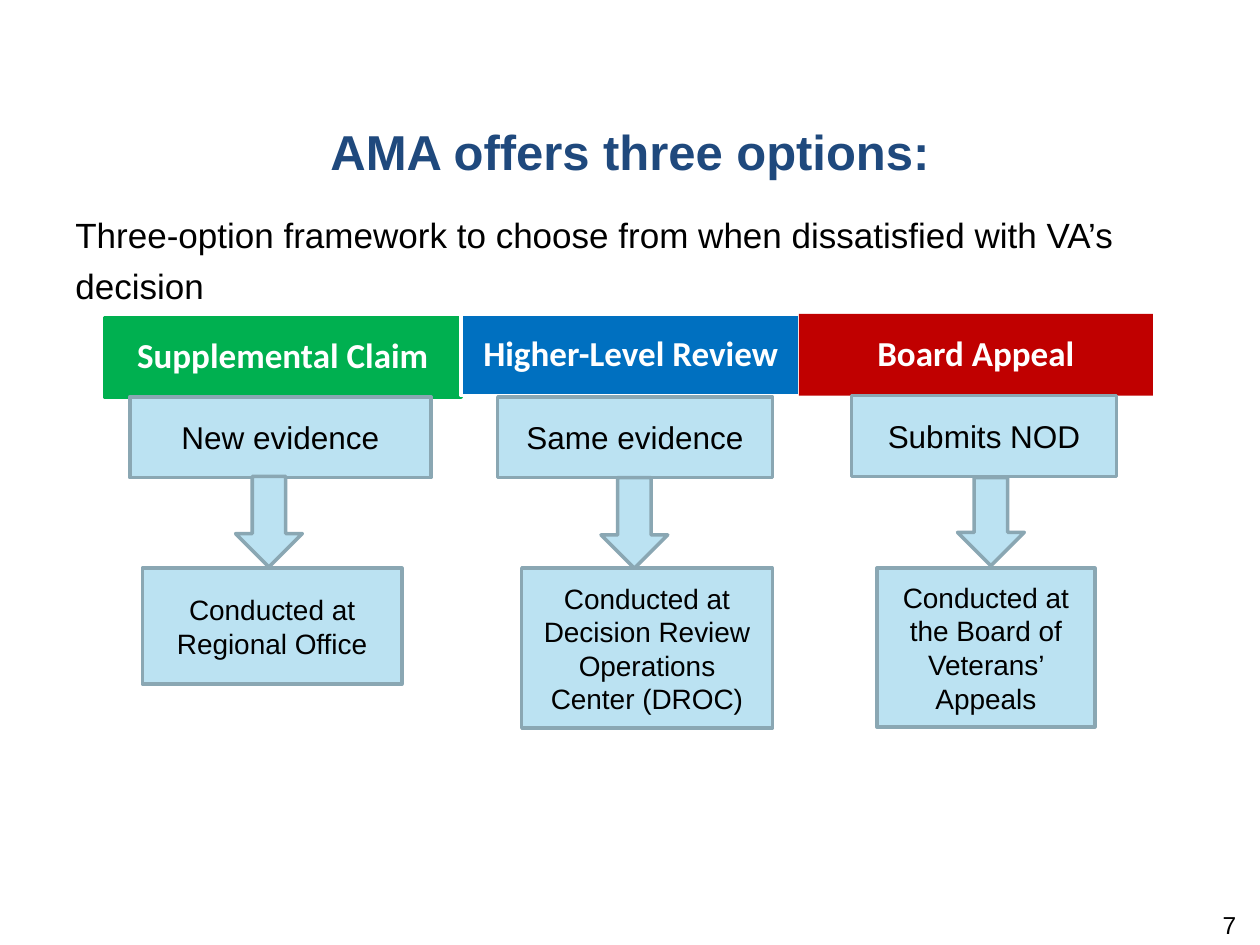
"""Build the slide on the three AMA review options."""
from pptx import Presentation
from pptx.dml.color import RGBColor
from pptx.enum.shapes import MSO_SHAPE
from pptx.enum.text import MSO_ANCHOR, PP_ALIGN
from pptx.util import Inches, Pt

RECT, PROCESS, ARROW = MSO_SHAPE.RECTANGLE, MSO_SHAPE.FLOWCHART_PROCESS, MSO_SHAPE.DOWN_ARROW
LEFT, CENTER, RIGHT = PP_ALIGN.LEFT, PP_ALIGN.CENTER, PP_ALIGN.RIGHT
TOP, MIDDLE = MSO_ANCHOR.TOP, MSO_ANCHOR.MIDDLE

THEME = {
    "title": ("Arial", 28, "1F497D", True),
    "body": ("Arial", 20, "000000", False),
    "number": ("Arial", 14, "000000", False),
    "header": ("Calibri", 20, "FFFFFF", True),
    "step": ("Arial", 18, "000000", False),
    "place": ("Arial", 16, "000000", False),
    "box_fill": "BBE2F2",
    "box_line": "8AA7B3",
    "green": "00B050",
    "blue": "0070C0",
    "red": "C00000",
    "white": "FFFFFF",
}

prs = Presentation()
prs.slide_width, prs.slide_height = Inches(10), Inches(7.5)
s = prs.slides.add_slide(prs.slide_layouts[6])
COL, ROW = prs.slide_width / 100, prs.slide_height / 75


def write(sp, text, style, align=CENTER, anchor=MIDDLE, spacing=1.0, top=0.05):
    name, size, color, bold = THEME[style]
    tf = sp.text_frame
    tf.word_wrap = True
    tf.vertical_anchor = anchor
    tf.margin_top = Inches(top)
    tf.text = text
    p = tf.paragraphs[0]
    p.alignment = align
    p.line_spacing = spacing
    r = p.runs[0]
    r.font.name, r.font.size, r.font.bold = name, Pt(size), bold
    r.font.color.rgb = RGBColor.from_string(color)


def add_box(kind, x, y, w, h, fill="box_fill", line="box_line"):
    sp = s.shapes.add_shape(kind, int(x * COL), int(y * ROW), int(w * COL), int(h * ROW))
    sp.shadow.inherit = False
    sp.fill.solid()
    sp.fill.fore_color.rgb = RGBColor.from_string(THEME[fill])
    if line:
        sp.line.color.rgb = RGBColor.from_string(THEME[line])
        sp.line.width = Pt(2)
    else:
        sp.line.fill.background()
    return sp


TEXTS = [
    ("AMA offers three options:", "title", (0, 8.7, 100, 7.9), CENTER, 1.0, 0.09),
    ("Three-option framework to choose from when dissatisfied with VA’s decision",
     "body", (5, 15.8, 90, 52.2), LEFT, 1.2, 0.05),
    ("7", "number", (75.8, 72.2, 23.3, 4), RIGHT, 1.0, 0),
]
for text, style, (x, y, w, h), align, spacing, top in TEXTS:
    sp = s.shapes.add_textbox(int(x * COL), int(y * ROW), int(w * COL), int(h * ROW))
    write(sp, text, style, align, TOP, spacing, top)

HEADERS = [
    ("Supplemental Claim", (8.3, 25.2, 28.3, 6.3), "green", "green"),
    ("Higher-Level Review", (36.6, 24.9, 26.9, 6.5), "blue", "white"),
    ("Board Appeal", (63.4, 24.9, 28.1, 6.5), "red", None),
]
for text, place, fill, line in HEADERS:
    sp = add_box(RECT, *place, fill, line)
    tf = sp.text_frame
    tf.margin_left = tf.margin_right = tf.margin_bottom = Inches(0.12)
    write(sp, text, "header", spacing=0.9, top=0.12)

STEPS = [
    ("New evidence", (10.3, 31.5, 23.9, 6.4)),
    ("Same evidence", (39.5, 31.5, 21.8, 6.4)),
    ("Submits NOD", (67.6, 31.4, 21, 6.4)),
]
for text, place in STEPS:
    write(add_box(PROCESS, *place), text, "step")

for x, y, h in [(18.7, 37.8, 7.2), (47.7, 37.9, 7.2), (76, 37.9, 7)]:
    add_box(ARROW, x, y, 5.3, h)

PLACES = [
    ("Conducted at Regional Office", 11.3, 20.6, 9.2),
    ("Conducted at Decision Review Operations Center (DROC)", 41.4, 19.9, 12.7),
    ("Conducted at the Board of Veterans’ Appeals", 69.6, 17.3, 12.6),
]
for text, x, w, h in PLACES:
    write(add_box(RECT, x, 45.1, w, h), text, "place")

prs.save("out.pptx")
